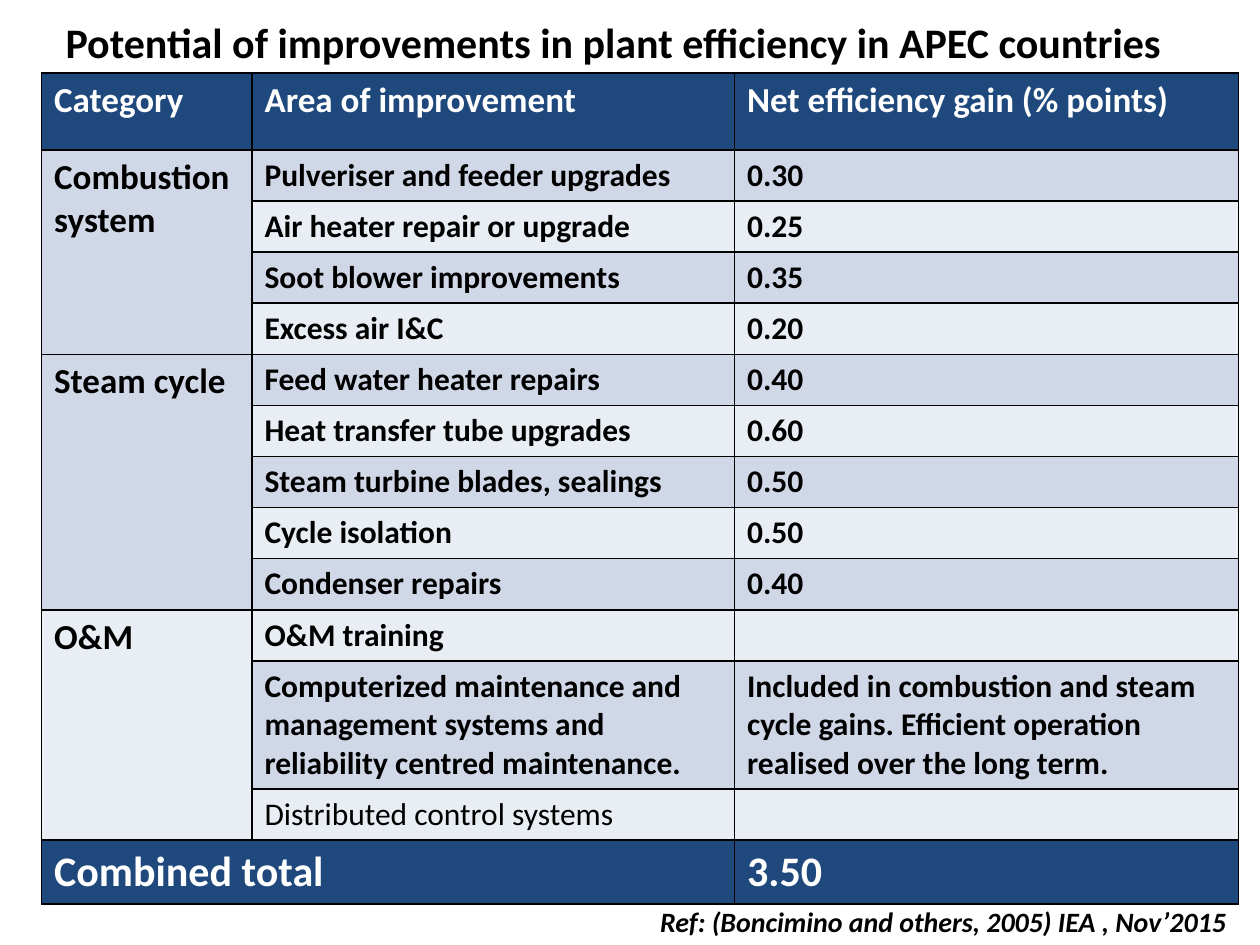
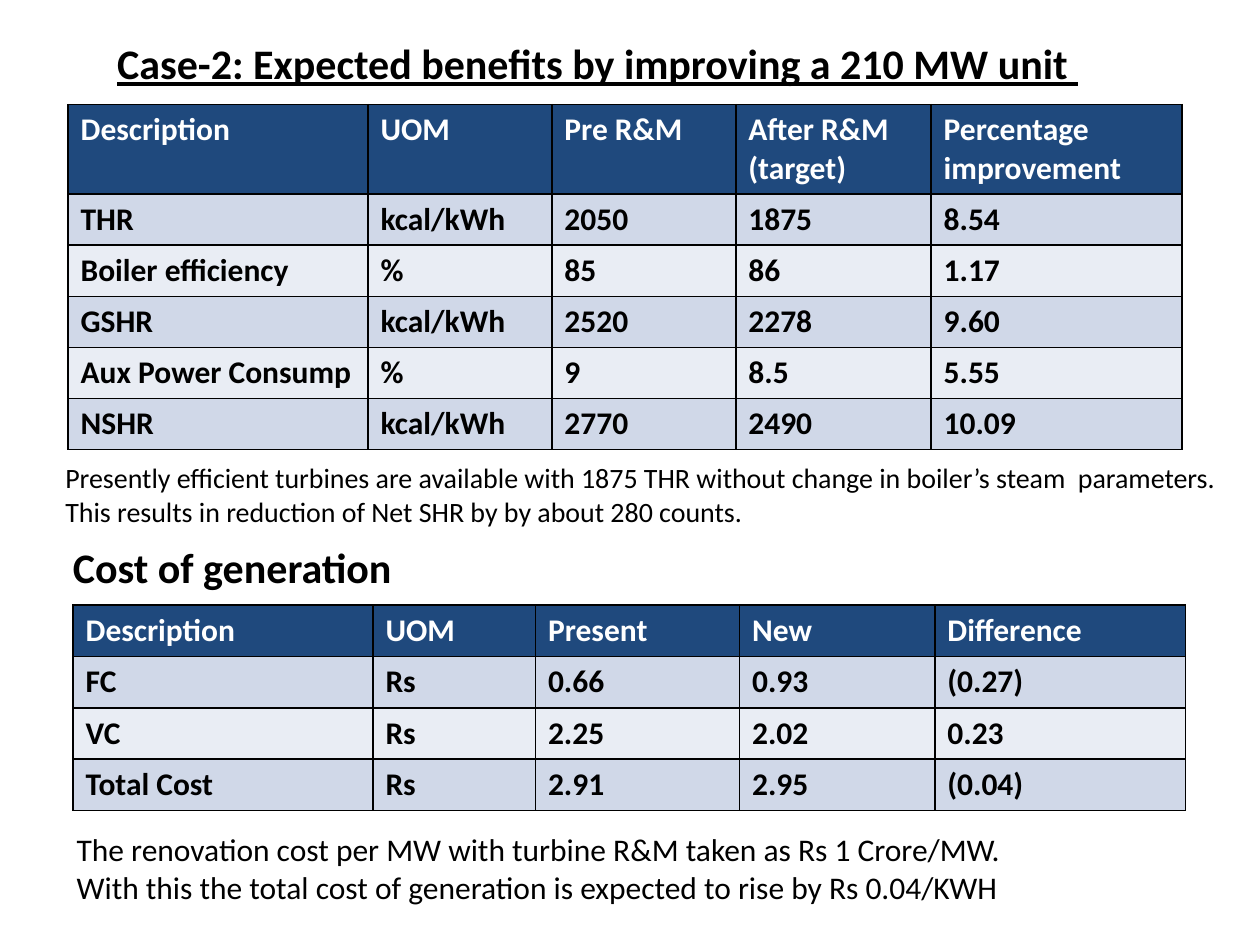
from dataclasses import dataclass

from lxml import etree
from pptx import Presentation
from pptx.dml.color import RGBColor
from pptx.enum import text as txt
from pptx.oxml.ns import qn
from pptx.util import Inches, Pt


@dataclass(frozen=True)
class Theme:
    font: str = "Calibri"
    ink: str = "000000"
    paper: str = "FFFFFF"
    navy: str = "1F497D"
    bands: tuple = ("E9EDF4", "D0D8E8")
    title: int = 24
    lead: int = 20
    body: int = 18
    note: int = 16


T = Theme()

GAINS = [
    ("Category", "Area of improvement", "Net efficiency gain (% points)"),
    ("Combustion system", "Pulveriser and feeder upgrades", "0.30"),
    ("", "Air heater repair or upgrade", "0.25"),
    ("", "Soot blower improvements", "0.35"),
    ("", "Excess air I&C", "0.20"),
    ("Steam cycle", "Feed water heater repairs", "0.40"),
    ("", "Heat transfer tube upgrades", "0.60"),
    ("", "Steam turbine blades, sealings", "0.50"),
    ("", "Cycle isolation", "0.50"),
    ("", "Condenser repairs", "0.40"),
    ("O&M", "O&M training", ""),
    ("", "Computerized maintenance and management systems and "
     "reliability centred maintenance.",
     "Included in combustion and steam cycle gains. "
     "Efficient operation realised over the long term."),
    ("", "Distributed control systems", ""),
    ("Combined total", "", "3.50"),
]
UNIT = [
    ("Description", "UOM", "Pre R&M", "After R&M (target)",
     "Percentage improvement"),
    ("THR", "kcal/kWh", "2050", "1875", "8.54"),
    ("Boiler efficiency", "%", "85", "86", "1.17"),
    ("GSHR", "kcal/kWh", "2520", "2278", "9.60"),
    ("Aux Power Consump", "%", "9", "8.5", "5.55"),
    ("NSHR", "kcal/kWh", "2770", "2490", "10.09"),
]
COST = [
    ("Description", "UOM", "Present", "New", "Difference"),
    ("FC", "Rs", "0.66", "0.93", "(0.27)"),
    ("VC", "Rs", "2.25", "2.02", "0.23"),
    ("Total Cost", "Rs", "2.91", "2.95", "(0.04)"),
]


def style(run, size, color=T.ink, **marks):
    font = run.font
    font.color.rgb = RGBColor.from_string(color)
    for name, value in dict(name=T.font, size=Pt(size), **marks).items():
        setattr(font, name, value)


def write(frame, lines, size, wrap=True, **marks):
    frame.word_wrap = wrap
    frame.auto_size = txt.MSO_AUTO_SIZE.NONE
    frame.vertical_anchor = txt.MSO_ANCHOR.TOP
    for i, line in enumerate(lines):
        para = frame.add_paragraph() if i else frame.paragraphs[0]
        para.alignment = txt.PP_ALIGN.LEFT
        run = para.add_run()
        run.text = line
        style(run, size, **marks)


def label(slide, box, lines, size, **marks):
    shape = slide.shapes.add_textbox(*map(Inches, box))
    write(shape.text_frame, lines, size, **marks)


def start(deck, box, title, **marks):
    """Add a title-only slide and set its heading."""
    slide = deck.slides.add_slide(deck.slide_layouts[5])
    head = slide.shapes.title
    head.left, head.top, head.width, head.height = map(Inches, box)
    write(head.text_frame, [title], T.title, bold=True, **marks)
    return slide


def rule(cell):
    """Draw a thin line on all four sides of a cell."""
    props = cell._tc.get_or_add_tcPr()
    for side in ("lnL", "lnR", "lnT", "lnB"):
        line = etree.SubElement(props, qn("a:" + side), w=str(Pt(1)))
        fill = etree.SubElement(line, qn("a:solidFill"))
        etree.SubElement(fill, qn("a:srgbClr"), val=T.ink)


def grid(slide, spot, cols, tall, data, size=T.body, lead=T.body, total=False):
    """Place a banded table; a total row is dark like the header."""
    box = (*spot, sum(cols), sum(tall))
    table = slide.shapes.add_table(
        len(data), len(cols), *map(Inches, box)).table
    for col, wide in zip(table.columns, cols):
        col.width = Inches(wide)
    last = len(data) - 1 if total else None
    for r, (row, high) in enumerate(zip(data, tall)):
        table.rows[r].height = Inches(high)
        dark = r in (0, last)
        for c, value in enumerate(row):
            cell = table.cell(r, c)
            rule(cell)
            cell.fill.solid()
            cell.fill.fore_color.rgb = RGBColor.from_string(
                T.navy if dark else T.bands[r % 2])
            if value:
                run = cell.text_frame.paragraphs[0].add_run()
                run.text = value
                points = (T.title if r == last else size if r == 0
                          else lead if c == 0 else T.body)
                style(run, points, T.paper if dark else T.ink, bold=True)
    return table


def gains(deck):
    slide = start(deck, (0.42, 0.08, 9.24, 0.5),
                  "Potential of improvements in plant efficiency in APEC countries")
    tall = [0.61] + [0.4] * 10 + [1.0, 0.4, 0.5]
    table = grid(slide, (0.33, 0.58), (1.67, 3.83, 4), tall, GAINS,
                 size=T.lead, lead=T.lead, total=True)
    for top, end in ((1, 4), (5, 9), (10, 12)):
        table.cell(top, 0).merge(table.cell(end, 0))
    table.cell(13, 0).merge(table.cell(13, 1))
    table.cell(12, 1).text_frame.paragraphs[0].runs[0].font.bold = False
    label(slide, (5.14, 7.13, 4.78, 0.37),
          ["Ref: (Boncimino and others, 2005) IEA , Nov’2015"],
          T.note, wrap=False, bold=True, italic=True)


def case(deck):
    slide = start(deck, (0.83, 0.25, 8.92, 0.5),
                  "Case-2: Expected benefits by improving a 210 MW unit ",
                  underline=True)
    grid(slide, (0.54, 0.83), (2.38, 1.46, 1.46, 1.55, 1.99),
         [0.7] + [0.4] * 5, UNIT)
    label(slide, (0.42, 3.61, 9.42, 0.64),
          ["Presently efficient turbines are available with 1875 THR "
           "without change in boiler’s steam  parameters.",
           "This results in reduction of Net SHR by by about 280 counts."],
          T.note)
    label(slide, (0.48, 4.25, 3.56, 0.5), ["Cost of generation"],
          T.title, bold=True)
    grid(slide, (0.58, 4.8), (2.38, 1.29, 1.62, 1.55, 1.99),
         [0.41, 0.41, 0.4, 0.4], COST)
    label(slide, (0.51, 6.54, 8.9, 0.71),
          ["The renovation cost per MW with turbine R&M taken as Rs 1 Crore/MW.",
           "With this the total cost of generation is expected to rise "
           "by Rs 0.04/KWH"], T.body)


def main():
    deck = Presentation()
    deck.slide_width, deck.slide_height = Inches(10), Inches(7.5)
    gains(deck)
    case(deck)
    deck.save("out.pptx")


if __name__ == "__main__":
    main()
